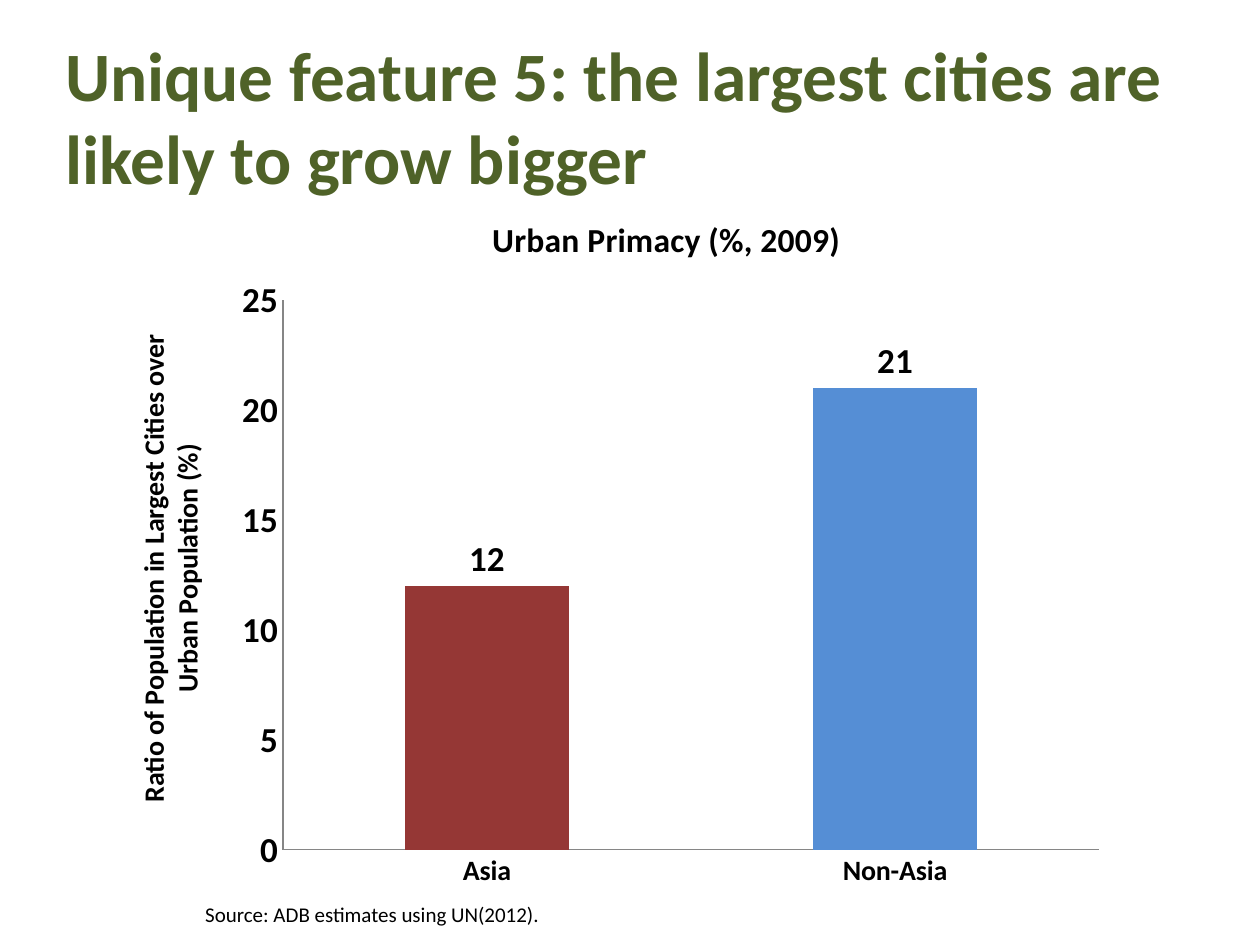
from pptx import Presentation
from pptx.chart.data import CategoryChartData
from pptx.dml.color import RGBColor
from pptx.enum.chart import XL_CHART_TYPE, XL_LABEL_POSITION, XL_TICK_MARK
from pptx.enum.text import MSO_ANCHOR, PP_ALIGN
from pptx.oxml import parse_xml
from pptx.oxml.ns import nsdecls
from pptx.util import Inches, Pt

COLORS = {"title": "4F6228", "text": "000000", "axis": "868686",
          "asia": "953735", "other": "558ED5"}


def style(font, size, color="text", bold=True):
    font.name = "Calibri"
    font.size = Pt(size)
    font.bold = bold
    font.color.rgb = RGBColor.from_string(COLORS[color])


def add_text(box, text, size, color="text", bold=True, wrap=True):
    """Add a text box at box (left, top, width, height in inches)."""
    shape = slide.shapes.add_textbox(*map(Inches, box))
    shape.text_frame.word_wrap = wrap
    para = shape.text_frame.paragraphs[0]
    para.text = text
    style(para.font, size, color, bold)
    return shape


prs = Presentation()
prs.slide_width, prs.slide_height = Inches(10), Inches(7.5)
slide = prs.slides.add_slide(prs.slide_layouts[6])

# Chart
data = CategoryChartData()
data.categories = ["Asia", "Non-Asia"]
data.add_series("Urban primacy", [12, 21])
chart = slide.shapes.add_chart(
    XL_CHART_TYPE.COLUMN_CLUSTERED, Inches(1.75), Inches(1.5),
    Inches(7.08), Inches(5.67), data).chart
style(chart.font, 16)
chart.has_legend = False
chart.has_title = True
head = chart.chart_title.text_frame.paragraphs[0]
head.text = "Urban Primacy (%, 2009)"
style(head.font, 19.2)

# Axes
for axis, size in ((chart.category_axis, 16), (chart.value_axis, 20)):
    axis.has_major_gridlines = False
    axis.major_tick_mark = axis.minor_tick_mark = XL_TICK_MARK.NONE
    axis.format.line.color.rgb = RGBColor.from_string(COLORS["axis"])
    axis.format.line.width = Pt(0.75)
    style(axis.tick_labels.font, size)
scale = chart.value_axis
scale.minimum_scale, scale.maximum_scale, scale.major_unit = 0, 25, 5

# Columns and their labels
plot = chart.plots[0]
plot.gap_width = 150
plot.vary_by_categories = False
series = plot.series[0]
for part, color in ((series, "other"), (series.points[0], "asia")):
    part.format.fill.solid()
    part.format.fill.fore_color.rgb = RGBColor.from_string(COLORS[color])
labels = series.data_labels
labels.show_value = True
labels.position = XL_LABEL_POSITION.OUTSIDE_END
style(labels.font, 20)

# Fixed inner plot area, as fractions of the chart
area = chart._chartSpace.chart.plotArea
for old in area.findall("{*}layout"):
    area.remove(old)
area.insert(0, parse_xml(
    f'<c:layout {nsdecls("c")}><c:manualLayout><c:layoutTarget val="inner"/>'
    '<c:xMode val="edge"/><c:yMode val="edge"/><c:x val="0.07"/>'
    '<c:y val="0.155"/><c:w val="0.915"/><c:h val="0.77"/>'
    '</c:manualLayout></c:layout>'))

# Texts
side = add_text((-0.61, 4.19, 3.92, 0.64),
                "Ratio of Population in Largest Cities over "
                "Urban Population (%)", 16)
side.rotation = 270
side.text_frame.paragraphs[0].alignment = PP_ALIGN.CENTER
title = add_text((0.42, 0.25, 9, 1.33),
                 "Unique feature 5: the largest cities are "
                 "likely to grow bigger", 39.6, "title")
title.text_frame.vertical_anchor = MSO_ANCHOR.MIDDLE
add_text((1.53, 7.11, 2.89, 0.3), "Source: ADB estimates using UN(2012).",
         12, bold=False, wrap=False)

prs.save("out.pptx")
